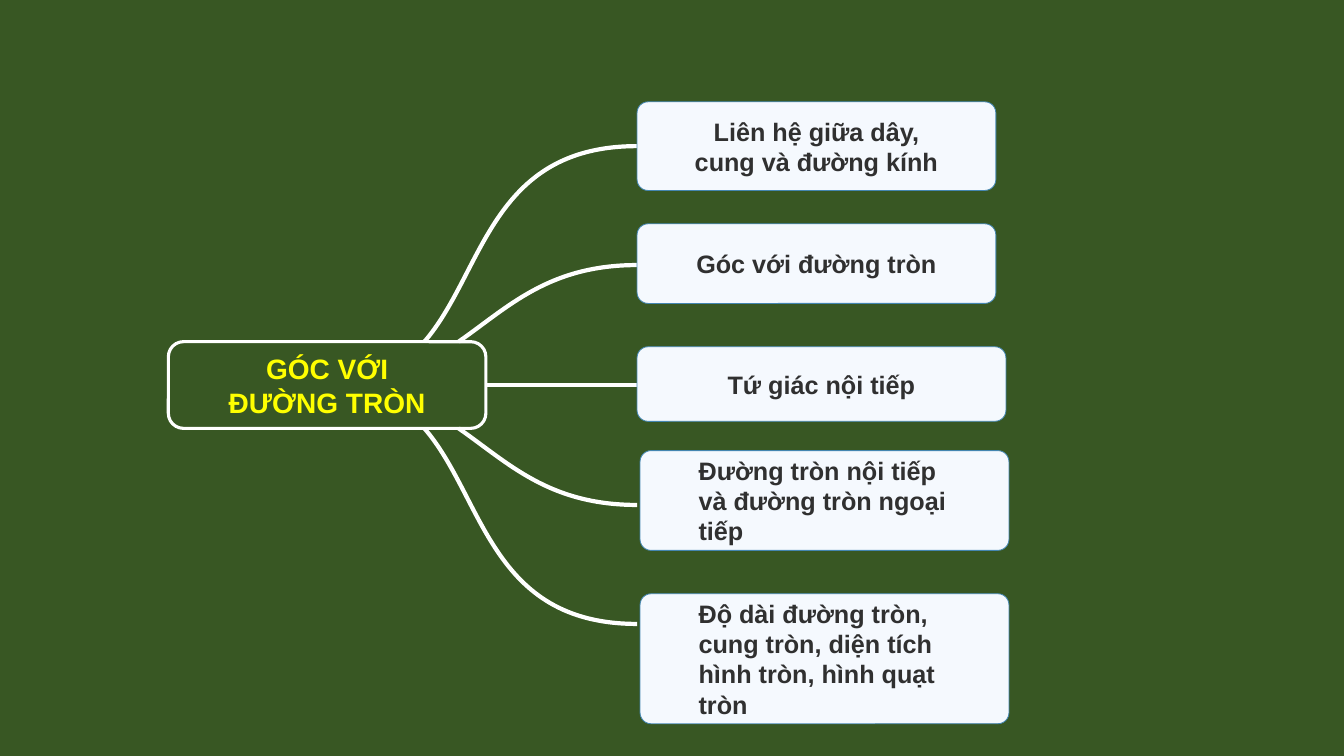
from lxml import etree
from pptx import Presentation
from pptx.dml.color import RGBColor
from pptx.enum.shapes import MSO_CONNECTOR as Connector, MSO_SHAPE as Shape
from pptx.enum.text import MSO_ANCHOR as Anchor, PP_ALIGN as Align
from pptx.oxml.ns import qn
from pptx.util import Inches, Pt

# Grid: one cell is a tenth of an inch, for both columns and rows
COLUMNS, ROWS = 133.33, 75
MIDDLE = 38.2          # row of the mind map's axis
BRANCH_LEFT = 63.2     # column where the branches end
ROOT = (16.7, 33.9, 31.5, 8.6)
SIDE_INSET = 0.15      # share of a box's width kept free on each side

GREEN, WHITE, YELLOW = "385723", "FFFFFF", "FFFF00"
PALE, BLUE, INK = "F5F9FE", "4486B1", "303030"

# Wording, left, top, width, height, alignment
TOPICS = [
    ("Liên hệ giữa dây, cung và đường kính", 63.2, 10.1, 35.6, 8.8, Align.CENTER),
    ("Góc với đường tròn", 63.2, 22.2, 35.6, 7.9, Align.CENTER),
    ("Tứ giác nội tiếp", 63.2, 34.4, 36.6, 7.4, Align.CENTER),
    ("Đường tròn nội tiếp và đường tròn ngoại tiếp", 63.5, 44.7, 36.6, 9.9, Align.LEFT),
    ("Độ dài đường tròn, cung tròn, diện tích hình tròn, hình quạt tròn",
     63.5, 58.9, 36.6, 12.9, Align.LEFT),
]

# Start and two control points of the upper curves, then the end;
# rows are counted upwards from the axis
CURVES = [
    [(42.1, 4.3), (48, 11.1), (48.6, 23.7), (BRANCH_LEFT, 23.7)],
    [(45.5, 4.3), (50.4, 7.7), (54.4, 11.9), (BRANCH_LEFT, 11.9)],
]


def cells(count):
    return Inches(count / 10)


def color(value):
    return RGBColor.from_string(value)


def set_line(shape, value, width):
    shape.line.color.rgb = color(value)
    shape.line.width = Pt(width)


def add_curve(page, points):
    """Draw one cubic curve from a start, two control points and an end."""
    start, *others = [(cells(x), cells(y)) for x, y in points]
    builder = page.shapes.build_freeform(*start, scale=1.0)
    builder.add_line_segments(others, close=False)
    curve = builder.convert_to_shape()
    curve.shadow.inherit = False
    curve.fill.background()
    set_line(curve, WHITE, 3)
    # Turn the three straight segments into one cubic segment
    outline = next(curve.element.iter(qn("a:path")))
    bezier = etree.SubElement(outline, qn("a:cubicBezTo"))
    for segment in outline.findall(qn("a:lnTo")):
        bezier.append(segment[0])
        outline.remove(segment)


def add_straight(page, left, right, row):
    line = page.shapes.add_connector(
        Connector.STRAIGHT, cells(left), cells(row), cells(right), cells(row))
    set_line(line, WHITE, 3)
    etree.SubElement(line.element.spPr, qn("a:effectLst"))


def add_box(page, wording, place, align, size, ink, fill, edge, edge_width, radius):
    left, top, width, height = place
    box = page.shapes.add_shape(
        Shape.ROUNDED_RECTANGLE, *(cells(length) for length in place))
    box.adjustments[0] = radius / height
    box.shadow.inherit = False
    if fill:
        box.fill.solid()
        box.fill.fore_color.rgb = color(fill)
    else:
        box.fill.background()
    set_line(box, edge, edge_width)

    frame = box.text_frame
    frame.word_wrap = True
    frame.vertical_anchor = Anchor.MIDDLE
    frame.margin_top = frame.margin_bottom = 0
    frame.margin_left = frame.margin_right = cells(width * SIDE_INSET)
    para = frame.paragraphs[0]
    para.alignment = align
    run = para.add_run()
    run.text = wording
    run.font.name = "Arial"
    run.font.size = Pt(size)
    run.font.bold = True
    run.font.color.rgb = color(ink)


def main():
    deck = Presentation()
    deck.slide_width, deck.slide_height = cells(COLUMNS), cells(ROWS)
    page = deck.slides.add_slide(deck.slide_layouts[6])
    page.background.fill.solid()
    page.background.fill.fore_color.rgb = color(GREEN)

    # Branches, mirrored about the axis
    for side in (-1, 1):
        for points in CURVES:
            add_curve(page, [(x, MIDDLE + side * rise) for x, rise in points])
    add_straight(page, ROOT[0] + ROOT[2], BRANCH_LEFT, MIDDLE)

    # Root and topics
    add_box(page, "GÓC VỚI ĐƯỜNG TRÒN", ROOT, Align.CENTER, 20, YELLOW,
            None, WHITE, 2.25, radius=1.5)
    for wording, *place, align in TOPICS:
        add_box(page, wording, place, align, 18, INK, PALE, BLUE, 0.6, radius=1.1)

    deck.save("out.pptx")


if __name__ == "__main__":
    main()
